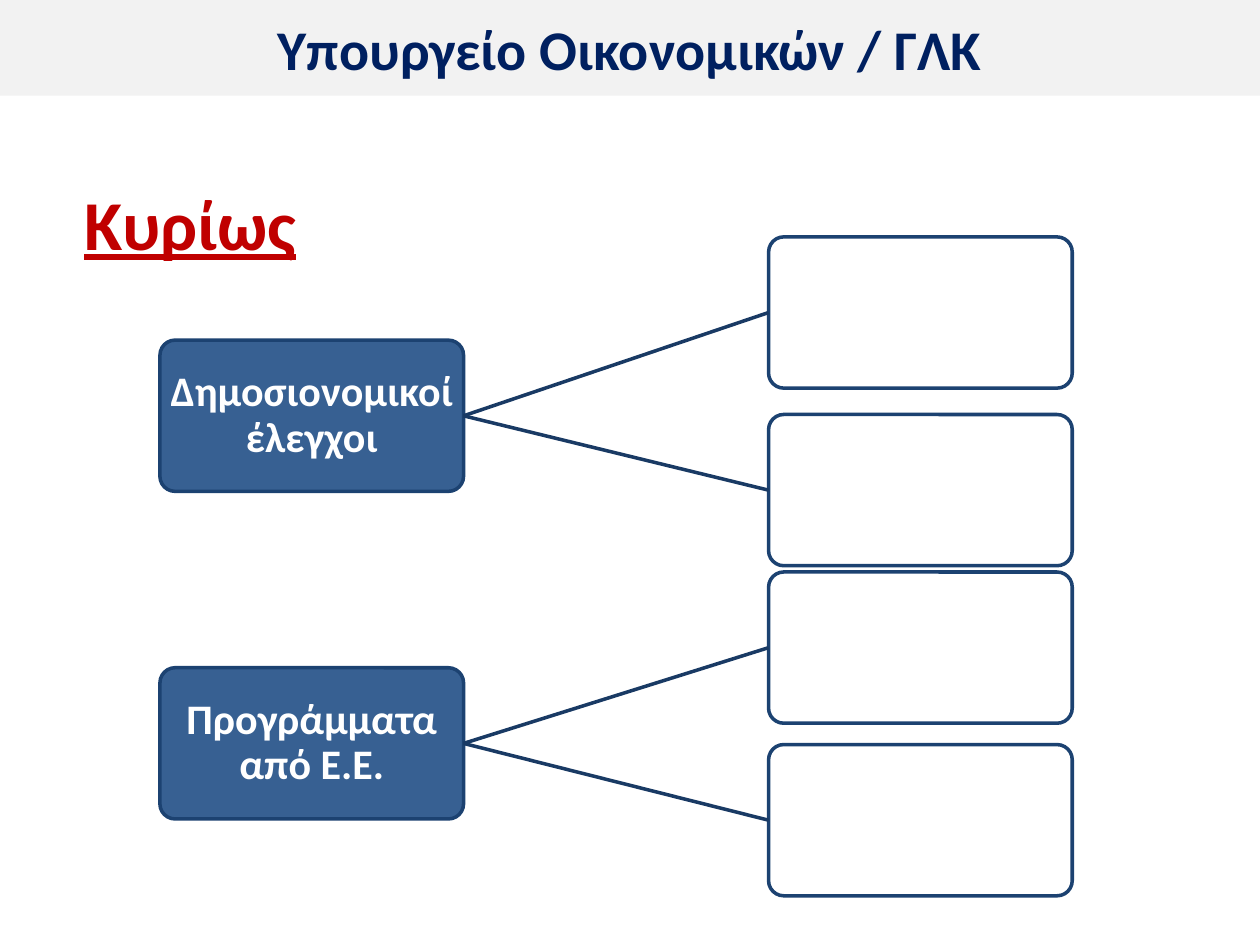
from dataclasses import dataclass

from pptx import Presentation
from pptx.dml.color import RGBColor
from pptx.enum.shapes import MSO_CONNECTOR, MSO_SHAPE
from pptx.enum.text import MSO_ANCHOR, MSO_AUTO_SIZE, PP_ALIGN
from pptx.oxml.ns import qn
from pptx.util import Pt


@dataclass(frozen=True)
class Theme:
    face: str = "Calibri"
    band: str = "F2F2F2"
    navy: str = "002060"
    red: str = "C00000"
    blue: str = "376092"
    edge: str = "1C4271"
    link: str = "193A64"
    white: str = "FFFFFF"
    title: int = 32
    head: int = 40
    label: int = 24
    line: int = 2


THEME = Theme()
BOX_W, BOX_H = 173.5, 86.4
ROOT_X, LEAF_X = 91.4, 439.2

# label, top of its box, tops of its two branches
TREES = [
    ("Δημοσιονομικοί έλεγχοι", 194.4, (135.4, 236.9)),
    ("Προγράμματα από Ε.Ε.", 381.6, (326.9, 425.5)),
]


def paint(fill, color):
    fill.solid()
    fill.fore_color.rgb = RGBColor.from_string(color)


def rule(line, color):
    paint(line.fill, color)
    line.width = Pt(THEME.line)


def write(frame, text, size, color, align=PP_ALIGN.CENTER, space=1.0):
    frame.word_wrap = True
    frame.auto_size = MSO_AUTO_SIZE.NONE
    para = frame.paragraphs[0]
    para.text = text
    para.alignment = align
    para.line_spacing = space
    font = para.font
    font.name, font.size, font.bold = THEME.face, Pt(size), True
    font.color.rgb = RGBColor.from_string(color)
    return para


def add_title(slide, text):
    title = slide.shapes.title
    title.left, title.top = Pt(0), Pt(0)
    title.width, title.height = Pt(720), Pt(54.7)
    paint(title.fill, THEME.band)
    title.text_frame.vertical_anchor = MSO_ANCHOR.MIDDLE
    write(title.text_frame, text, THEME.title, THEME.navy)


def add_head(slide, text):
    box = slide.shapes.add_textbox(Pt(41), Pt(92.2), Pt(175.7), Pt(45.4))
    para = write(box.text_frame, text, THEME.head, THEME.red,
                 PP_ALIGN.LEFT, 1.15)
    para.font.underline = True


def add_box(slide, left, top, fill):
    box = slide.shapes.add_shape(MSO_SHAPE.ROUNDED_RECTANGLE, Pt(left),
                                 Pt(top), Pt(BOX_W), Pt(BOX_H))
    box.adjustments[0] = 0.1
    box.shadow.inherit = False
    paint(box.fill, fill)
    rule(box.line, THEME.edge)
    return box


def add_label(box, text):
    frame = box.text_frame
    frame.margin_left = frame.margin_right = Pt(1.5)
    frame.margin_top = frame.margin_bottom = Pt(1.5)
    frame.vertical_anchor = MSO_ANCHOR.MIDDLE
    write(frame, text, THEME.label, THEME.white, space=0.9)


def join(slide, root, leaf):
    """Link the right side of root to the left side of leaf."""
    link = slide.shapes.add_connector(MSO_CONNECTOR.STRAIGHT, 0, 0, 0, 0)
    link.begin_connect(root, 3)
    link.end_connect(leaf, 1)
    rule(link.line, THEME.link)
    props = link._element.spPr
    props.append(props.makeelement(qn("a:effectLst"), {}))


def add_tree(slide, text, top, leaves):
    root = add_box(slide, ROOT_X, top, THEME.blue)
    add_label(root, text)
    for y in leaves:
        join(slide, root, add_box(slide, LEAF_X, y, THEME.white))


def main():
    deck = Presentation()
    deck.slide_width, deck.slide_height = Pt(720), Pt(540)
    slide = deck.slides.add_slide(deck.slide_layouts[5])
    add_title(slide, "Υπουργείο Οικονομικών / ΓΛΚ")
    add_head(slide, "Κυρίως")
    for tree in TREES:
        add_tree(slide, *tree)
    deck.save("out.pptx")


if __name__ == "__main__":
    main()
